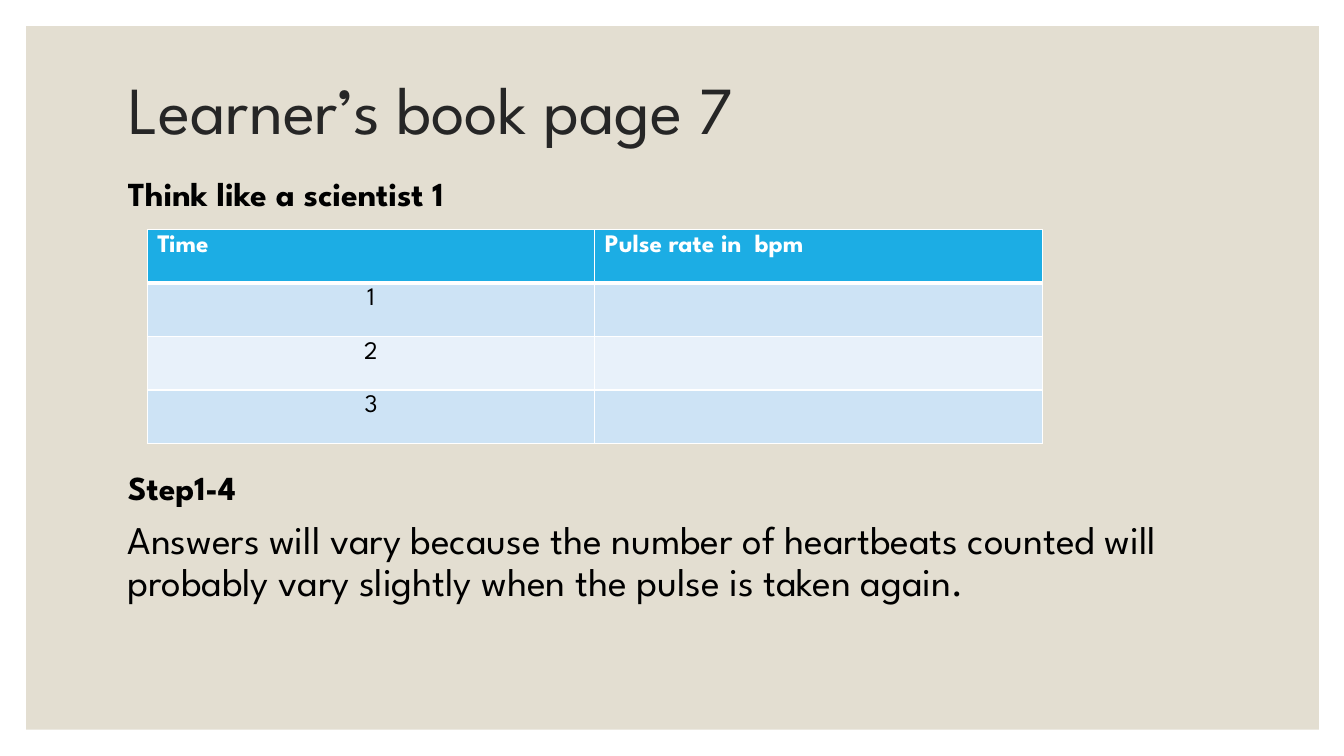
from dataclasses import dataclass

from lxml.etree import SubElement
from pptx import Presentation
from pptx.dml.color import RGBColor
from pptx.enum.shapes import MSO_SHAPE
from pptx.enum.text import MSO_ANCHOR, MSO_AUTO_SIZE, PP_ALIGN
from pptx.oxml.ns import qn
from pptx.slide import Slide
from pptx.table import _Cell as Cell
from pptx.text.text import TextFrame, _Paragraph as Paragraph
from pptx.util import Pt

EMU_PER_PX = 9144


def px(length: int) -> int:
    return length * EMU_PER_PX


@dataclass(frozen=True)
class Theme:
    font: str = "League Spartan"
    white: str = "FFFFFF"
    panel: str = "E3DED1"
    title: str = "262626"
    text: str = "000000"
    header: str = "1CADE4"
    bands: tuple[str, str] = ("CDE3F5", "E8F1FA")
    title_size: int = 48
    heading_size: int = 24
    answer_size: int = 28
    table_size: int = 18
    thin_border: int = 1
    thick_border: int = 3


THEME = Theme()


@dataclass(frozen=True)
class Box:
    left: int
    top: int
    width: int
    height: int

    def emu(self) -> tuple[int, int, int, int]:
        return px(self.left), px(self.top), px(self.width), px(self.height)


@dataclass(frozen=True)
class Line:
    text: str
    size: int
    bold: bool = False


@dataclass(frozen=True)
class TextBlock:
    box: Box
    lines: tuple[Line, ...]


PANEL_BOX = Box(26, 26, 1282, 698)
TITLE_BOX = Box(117, 37, 1100, 150)
TABLE_BOX = Box(146, 228, 888, 212)
TITLE = Line("Learner’s book page 7", THEME.title_size)
TABLE_ROWS = (("Time", "Pulse rate in  bpm"), ("1", ""), ("2", ""), ("3", ""))
TEXT_BLOCKS = (
    TextBlock(
        Box(117, 171, 1100, 55),
        (Line("Think like a scientist 1", THEME.heading_size, True),),
    ),
    TextBlock(
        Box(117, 463, 1100, 203),
        (
            Line("Step1-4", THEME.heading_size, True),
            Line(
                "Answers will vary because the number of heartbeats counted will "
                "probably vary slightly when the pulse is taken again.",
                THEME.answer_size,
            ),
        ),
    ),
)


def write_line(paragraph: Paragraph, line: Line, color: str) -> None:
    paragraph.text = line.text
    paragraph.font.name = THEME.font
    paragraph.font.size = Pt(line.size)
    paragraph.font.bold = line.bold
    paragraph.font.color.rgb = RGBColor.from_string(color)


def prepare_frame(frame: TextFrame, anchor: MSO_ANCHOR) -> None:
    frame.word_wrap = True
    frame.auto_size = MSO_AUTO_SIZE.NONE
    frame.vertical_anchor = anchor


def draw_title(slide: Slide) -> None:
    title = slide.shapes.title
    title.left, title.top, title.width, title.height = TITLE_BOX.emu()
    prepare_frame(title.text_frame, MSO_ANCHOR.MIDDLE)
    paragraph = title.text_frame.paragraphs[0]
    write_line(paragraph, TITLE, THEME.title)
    paragraph.alignment = PP_ALIGN.LEFT
    paragraph.line_spacing = 0.9


def draw_panel(slide: Slide) -> None:
    panel = slide.shapes.add_shape(MSO_SHAPE.RECTANGLE, *PANEL_BOX.emu())
    panel.shadow.inherit = False
    panel.fill.solid()
    panel.fill.fore_color.rgb = RGBColor.from_string(THEME.panel)
    panel.line.fill.background()
    slide.shapes.title.element.addprevious(panel.element)


def draw_text_block(slide: Slide, block: TextBlock) -> None:
    frame = slide.shapes.add_textbox(*block.box.emu()).text_frame
    prepare_frame(frame, MSO_ANCHOR.TOP)
    for index, line in enumerate(block.lines):
        paragraph = frame.add_paragraph() if index else frame.paragraphs[0]
        write_line(paragraph, line, THEME.text)
        paragraph.line_spacing = 0.9
        paragraph.space_before = Pt(9)


def set_borders(cell: Cell, row: int) -> None:
    thick_side = {0: "lnB", 1: "lnT"}.get(row)
    properties = cell._tc.get_or_add_tcPr()
    for side in ("lnL", "lnR", "lnT", "lnB"):
        points = THEME.thick_border if side == thick_side else THEME.thin_border
        border = SubElement(properties, qn(f"a:{side}"), w=str(Pt(points)))
        fill = SubElement(border, qn("a:solidFill"))
        SubElement(fill, qn("a:srgbClr"), val=THEME.white)


def draw_table(slide: Slide) -> None:
    row_count, column_count = len(TABLE_ROWS), len(TABLE_ROWS[0])
    table = slide.shapes.add_table(row_count, column_count, *TABLE_BOX.emu()).table
    for row, texts in enumerate(TABLE_ROWS):
        is_header = row == 0
        fill = THEME.header if is_header else THEME.bands[(row - 1) % 2]
        color = THEME.white if is_header else THEME.text
        for column, text in enumerate(texts):
            cell = table.cell(row, column)
            set_borders(cell, row)
            cell.fill.solid()
            cell.fill.fore_color.rgb = RGBColor.from_string(fill)
            paragraph = cell.text_frame.paragraphs[0]
            write_line(paragraph, Line(text, THEME.table_size, is_header), color)
            paragraph.alignment = PP_ALIGN.LEFT if is_header else PP_ALIGN.CENTER


def main() -> None:
    presentation = Presentation()
    presentation.slide_width, presentation.slide_height = px(1333), px(750)
    slide = presentation.slides.add_slide(presentation.slide_layouts[5])
    draw_panel(slide)
    draw_title(slide)
    for block in TEXT_BLOCKS:
        draw_text_block(slide, block)
    draw_table(slide)
    presentation.save("out.pptx")


if __name__ == "__main__":
    main()
